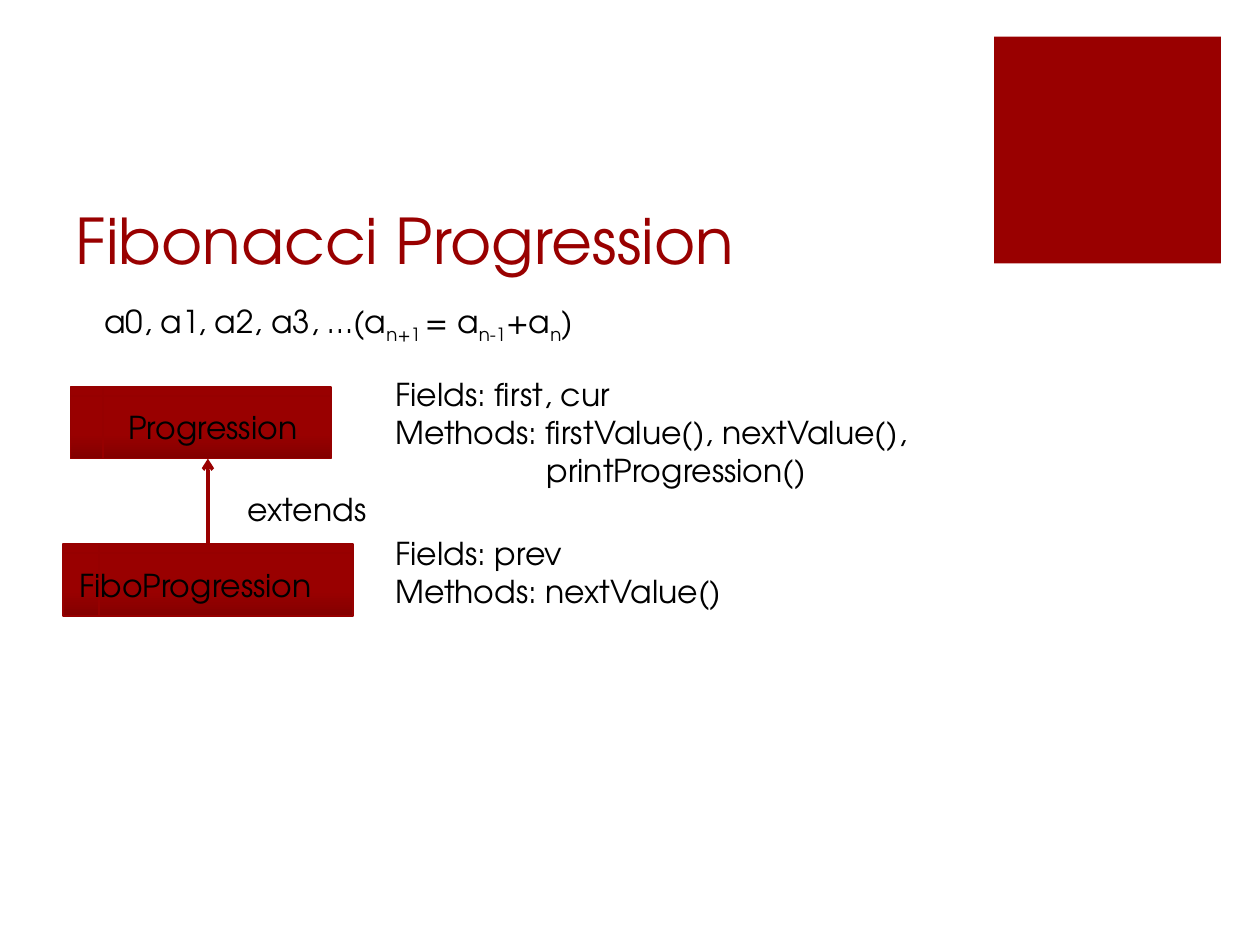
from pptx import Presentation
from pptx.dml.color import RGBColor
from pptx.enum.shapes import MSO_CONNECTOR, MSO_SHAPE
from pptx.enum.text import MSO_ANCHOR, MSO_AUTO_SIZE, PP_ALIGN
from pptx.oxml.ns import qn
from pptx.util import Inches, Pt
from lxml.etree import SubElement

FONT = "TeX Gyre Adventor"
RED = RGBColor(0x99, 0x00, 0x00)
DARK_RED = RGBColor(0x83, 0x00, 0x00)
EDGE_RED = RGBColor(0x96, 0x00, 0x00)
BLACK = RGBColor(0x00, 0x00, 0x00)

CLASS_HEIGHT = 0.57
SUBSCRIPT = "-25000"


def set_font(para, size, color):
    para.font.name = FONT
    para.font.size = Pt(size)
    para.font.color.rgb = color


def add_title(page, text, left, top, width, height):
    title = page.shapes.title
    title.left, title.top = Inches(left), Inches(top)
    title.width, title.height = Inches(width), Inches(height)
    title.text_frame.vertical_anchor = MSO_ANCHOR.BOTTOM
    title.text_frame.text = text
    para = title.text_frame.paragraphs[0]
    para.alignment = PP_ALIGN.LEFT
    set_font(para, 36, RED)


def add_rect(page, preset, left, top, width, height):
    box = page.shapes.add_shape(
        preset, Inches(left), Inches(top), Inches(width), Inches(height))
    box.shadow.inherit = False
    return box


def add_corner_square(page, left, top, side):
    square = add_rect(page, MSO_SHAPE.RECTANGLE, left, top, side, side)
    square.fill.solid()
    square.fill.fore_color.rgb = RED
    square.line.fill.background()


def add_text(page, lines, left, top, width, height):
    box = page.shapes.add_textbox(
        Inches(left), Inches(top), Inches(width), Inches(height))
    frame = box.text_frame
    frame.word_wrap = False
    frame.auto_size = MSO_AUTO_SIZE.SHAPE_TO_FIT_TEXT
    frame.text = "\n".join(lines)
    for para in frame.paragraphs:
        set_font(para, 18, BLACK)
    return frame


def add_formula(page, left, top, width, height):
    """Recurrence whose every second span is a subscript."""
    para = add_text(page, [""], left, top, width, height).paragraphs[0]
    spans = ["a0, a1, a2, a3, …(a", "n+1 ", "= a", "n-1", "+a", "n", ")"]
    for index, text in enumerate(spans):
        span = para.add_run()
        span.text = text
        if index % 2:
            span.font._element.set("baseline", SUBSCRIPT)


def add_class(page, name, left, top, width, label_left, label_width):
    box = add_rect(page, MSO_SHAPE.FLOWCHART_INTERNAL_STORAGE,
                   left, top, width, CLASS_HEIGHT)
    box.fill.gradient()
    box.fill.gradient_angle = 90
    bottom, body = box.fill.gradient_stops
    bottom.color.rgb, body.color.rgb = DARK_RED, RED
    bottom.position, body.position = 0, 0.35
    box.line.color.rgb = EDGE_RED
    box.line.width = Pt(1)
    add_text(page, [name], label_left, top + 0.12, label_width, 0.4)


def add_extends_arrow(page, x, start, end):
    arrow = page.shapes.add_connector(
        MSO_CONNECTOR.STRAIGHT, Inches(x), Inches(start), Inches(x), Inches(end))
    arrow.line.color.rgb = RED
    arrow.line.width = Pt(2)
    SubElement(arrow.line._get_or_add_ln(), qn("a:tailEnd"), type="arrow")
    SubElement(arrow._element.spPr, qn("a:effectLst"))
    add_text(page, ["extends"], x + 0.22, end + 0.2, 1.16, 0.4)


def add_class_diagram(page, left, top):
    child_top = top + 1.25
    members_left = left + 2.54
    add_class(page, "Progression", left + 0.06, top, 2.07, left + 0.42, 1.57)
    add_class(page, "FiboProgression", left, child_top, 2.3, left + 0.03, 2.08)
    add_extends_arrow(page, left + 1.15, child_top, top + CLASS_HEIGHT)
    members = add_text(
        page,
        ["Fields: first, cur", "Methods: firstValue(), nextValue(),",
         "printProgression()"],
        members_left, top - 0.14, 4.29, 1.01)
    continuation = members.paragraphs[-1]._p.get_or_add_pPr()
    continuation.set("marL", str(Inches(1.2)))
    add_text(page, ["Fields: prev", "Methods: nextValue()"],
             members_left, child_top - 0.13, 2.82, 0.71)


def main():
    deck = Presentation()
    deck.slide_width, deck.slide_height = Inches(10), Inches(7.5)
    page = deck.slides.add_slide(deck.slide_layouts[5])
    add_corner_square(page, 7.89, 0.29, 1.8)
    add_title(page, "Fibonacci Progression", 0.5, 1, 7.12, 1.25)
    add_class_diagram(page, 0.5, 3.07)
    add_formula(page, 0.73, 2.35, 4.04, 0.4)
    deck.save("out.pptx")


if __name__ == "__main__":
    main()
